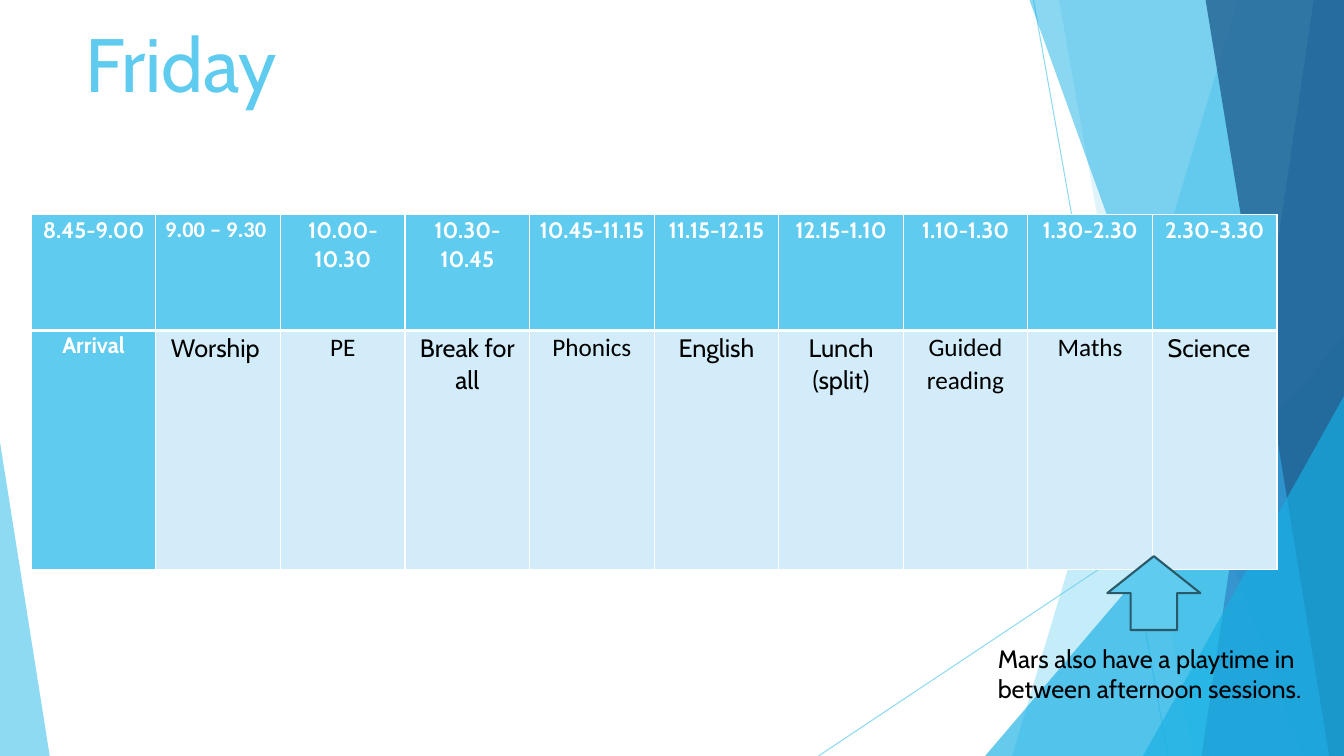
from lxml import etree
from pptx import Presentation
from pptx.dml.color import RGBColor
from pptx.enum.shapes import MSO_CONNECTOR, MSO_SHAPE
from pptx.enum.text import MSO_ANCHOR, PP_ALIGN
from pptx.oxml.ns import qn
from pptx.util import Inches, Pt

STRAIGHT = MSO_CONNECTOR.STRAIGHT
TRIANGLE = MSO_SHAPE.ISOSCELES_TRIANGLE
RIGHT_ARROW = MSO_SHAPE.RIGHT_ARROW
TOP = MSO_ANCHOR.TOP
LEFT, CENTER = PP_ALIGN.LEFT, PP_ALIGN.CENTER

SKY = RGBColor(0x5F, 0xCB, 0xEF)
CYAN = RGBColor(0x17, 0xB0, 0xE4)
BLUE = RGBColor(0x2E, 0x83, 0xC3)
NAVY = RGBColor(0x22, 0x62, 0x92)
PALE = RGBColor(0xD2, 0xEC, 0xF9)
OUTLINE = RGBColor(0x2A, 0x59, 0x69)
WHITE = RGBColor(0xFF, 0xFF, 0xFF)
BLACK = RGBColor(0, 0, 0)

CABIN, CALIBRI = "Cabin", "Calibri"

TIMETABLE = [
    [("8.45-9.00", CABIN), ("9.00 – 9.30 ", CALIBRI), ("10.00-10.30", CABIN),
     ("10.30-10.45", CABIN), ("10.45-11.15", CABIN), ("11.15-12.15", CABIN),
     ("12.15-1.10", CABIN), ("1.10-1.30", CABIN), ("1.30-2.30", CABIN),
     ("2.30-3.30", CABIN)],
    [("Arrival", CABIN), ("Worship ", CABIN), ("PE", CALIBRI),
     ("Break for all", CABIN), ("Phonics", CALIBRI), ("English", CABIN),
     ("Lunch (split)", CABIN), ("Guided reading", CALIBRI), ("Maths", CALIBRI),
     ("Science  ", CABIN)],
]


class SlideBuilder:
    """Places elements by percentages of the slide's width and height."""

    def __init__(self, prs):
        self.width, self.height = prs.slide_width, prs.slide_height
        self.s = prs.slides.add_slide(prs.slide_layouts[6])

    def x(self, share):
        return round(self.width * share / 100)

    def y(self, share):
        return round(self.height * share / 100)

    def box(self, left, top, width, height):
        return self.x(left), self.y(top), self.x(width), self.y(height)

    def set_opacity(self, sp, percent):
        color = next(sp.element.spPr.iter(qn("a:srgbClr")))
        etree.SubElement(color, qn("a:alpha"), val=str(percent * 1000))

    def paint(self, sp, color, opacity=100):
        sp.shadow.inherit = False
        sp.fill.solid()
        sp.fill.fore_color.rgb = color
        sp.line.fill.background()
        if opacity < 100:
            self.set_opacity(sp, opacity)

    def line(self, x1, y1, x2, y2):
        sp = self.s.shapes.add_connector(
            STRAIGHT, self.x(x1), self.y(y1), self.x(x2), self.y(y2))
        sp.line.color.rgb = SKY
        sp.line.width = Pt(0.75)
        self.set_opacity(sp, 70)
        etree.SubElement(sp.element.spPr, qn("a:effectLst"))

    def panel(self, top_x, bottom_x, color, opacity):
        builder = self.s.shapes.build_freeform(self.x(top_x), 0)
        builder.add_line_segments([
            (self.width, 0), (self.width, self.height),
            (self.x(bottom_x), self.height)])
        self.paint(builder.convert_to_shape(), color, opacity)

    def corner(self, left, top, width, apex, color, opacity):
        sp = self.s.shapes.add_shape(
            TRIANGLE, *self.box(left, top, width, 100 - top))
        sp.adjustments[0] = apex
        self.paint(sp, color, opacity)

    def arrow_up(self, left, top, width, height):
        sp = self.s.shapes.add_shape(
            RIGHT_ARROW, *self.box(left, top, width, height))
        sp.rotation = 270
        self.paint(sp, SKY)
        sp.line.color.rgb = OUTLINE
        sp.line.width = Pt(1.5)

    def style(self, p, size, color, font=CABIN, bold=False, align=LEFT):
        p.alignment = align
        p.font.name, p.font.size, p.font.bold = font, Pt(size), bold
        p.font.color.rgb = color

    def text(self, left, top, width, height, words, size, color):
        sp = self.s.shapes.add_textbox(*self.box(left, top, width, height))
        tf = sp.text_frame
        tf.word_wrap = True
        tf.vertical_anchor = TOP
        tf.text = words
        self.style(tf.paragraphs[0], size, color)

    def borders(self, cell, widths):
        tc_pr = cell._tc.get_or_add_tcPr()
        for side, width in zip("LRTB", widths):
            ln = etree.SubElement(tc_pr, qn(f"a:ln{side}"), w=str(Pt(width)))
            fill = etree.SubElement(ln, qn("a:solidFill"))
            etree.SubElement(fill, qn("a:srgbClr"), val=str(WHITE))

    def table(self, left, top, width, row_heights, rows):
        table = self.s.shapes.add_table(
            len(rows), len(rows[0]),
            *self.box(left, top, width, sum(row_heights))).table
        table.horz_banding = False
        for r, row in enumerate(rows):
            table.rows[r].height = self.y(row_heights[r])
            for c, (words, font) in enumerate(row):
                heading = r == 0 or c == 0
                cell = table.cell(r, c)
                self.borders(cell, (1, 1, 1, 3) if r == 0 else (1, 1, 3, 1))
                cell.fill.solid()
                cell.fill.fore_color.rgb = SKY if heading else PALE
                cell.margin_left = cell.margin_right = self.x(0.53)
                cell.margin_top = cell.margin_bottom = 0
                cell.text = words
                p = cell.text_frame.paragraphs[0]
                p.line_spacing = 1.07
                self.style(p, 16 if heading else 18,
                           WHITE if heading else BLACK, font, heading, CENTER)


def main():
    prs = Presentation()
    prs.slide_width, prs.slide_height = Inches(13.33), Inches(7.5)
    slide = SlideBuilder(prs)

    slide.line(76.9, 0, 86.9, 100)
    slide.line(100, 53.7, 60.9, 100)
    slide.panel(92.1, 75.3, SKY, 36)
    slide.panel(78.8, 88.75, SKY, 20)
    slide.corner(73.3, 44.4, 26.7, 1, CYAN, 66)
    slide.panel(76.6, 96.85, CYAN, 50)
    slide.panel(97.75, 89.4, BLUE, 70)
    slide.panel(89.7, 98.9, NAVY, 80)
    slide.corner(85.05, 52.4, 14.95, 1, CYAN, 66)
    slide.corner(0, 58.5, 3.7, 0, SKY, 70)

    slide.text(5.63, 1.6, 56.3, 4.5, "Friday", 54, SKY)
    slide.table(2.33, 28.4, 92.7, (15.33, 31.6), TIMETABLE)
    slide.arrow_up(83.1, 72.3, 5.5, 12.3)
    slide.text(73.5, 84.4, 29.2, 9.5,
               "Mars also have a playtime in between afternoon sessions.",
               18, BLACK)
    prs.save("out.pptx")


if __name__ == "__main__":
    main()
